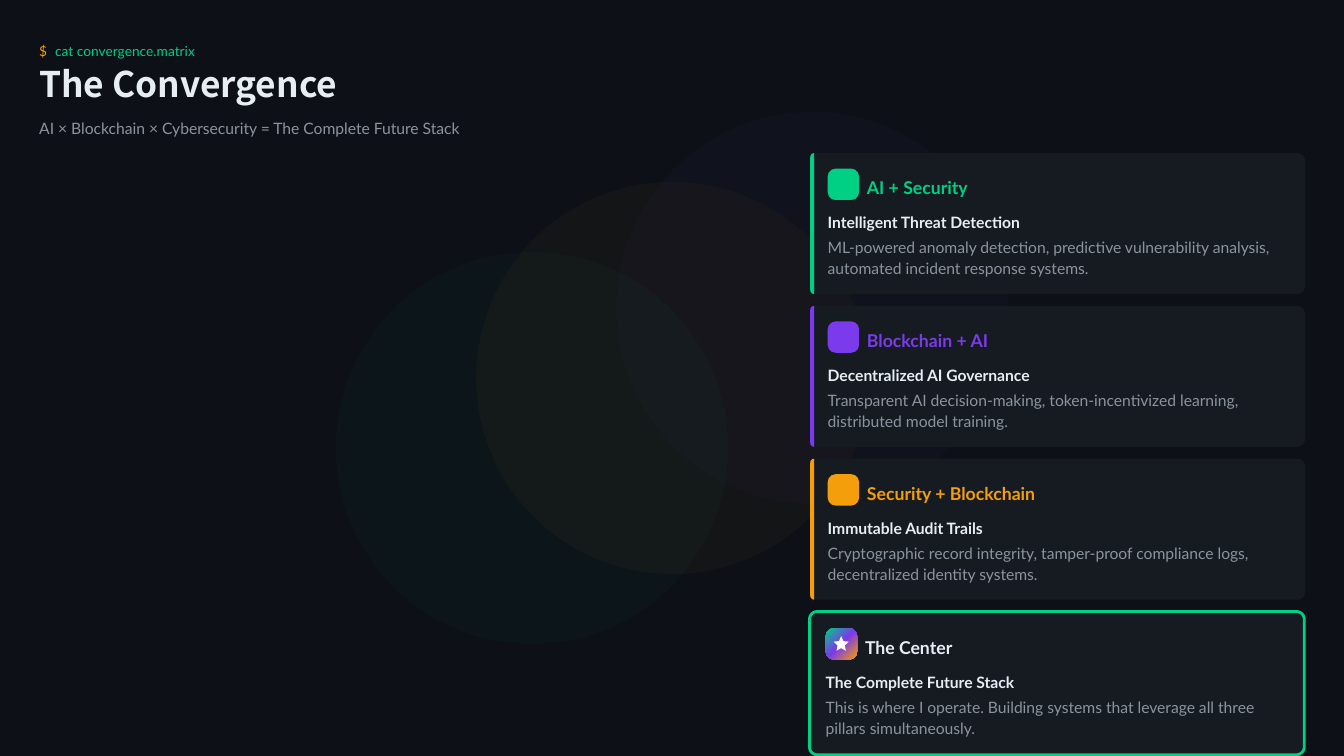
import copy
import dataclasses
import math

import lxml.etree
import pptx
import pptx.dml.color
import pptx.enum.shapes
import pptx.enum.text
import pptx.oxml.ns
import pptx.util

Cm = pptx.util.Cm
Pt = pptx.util.Pt
SHAPE = pptx.enum.shapes.MSO_SHAPE


@dataclasses.dataclass(frozen=True)
class Theme:
    """Colours, fonts and type sizes of the deck."""
    back: str = "0D1117"
    panel: str = "161B22"
    green: str = "00D084"
    purple: str = "7C3AED"
    amber: str = "F59E0B"
    light: str = "E6EDF3"
    muted: str = "8B949E"
    white: str = "FFFFFF"
    body_font: str = "Lato"
    title_font: str = "Noto Sans CJK SC"
    prompt: float = 9.8
    title: float = 25.2
    label: float = 12.6
    text: float = 11.2


THEME = Theme()

CARDS = [
    ("AI + Security", 2.95, THEME.green, "Intelligent Threat Detection",
     "ML-powered anomaly detection, predictive vulnerability analysis, "
     "automated incident response systems."),
    ("Blockchain + AI", 3.56, THEME.purple, "Decentralized AI Governance",
     "Transparent AI decision-making, token-incentivized learning, "
     "distributed model training."),
    ("Security + Blockchain", 4.85, THEME.amber, "Immutable Audit Trails",
     "Cryptographic record integrity, tamper-proof compliance logs, "
     "decentralized identity systems."),
]
CENTER = ("The Center", 2.54, THEME.light, "The Complete Future Stack",
          "This is where I operate. Building systems that leverage all three "
          "pillars simultaneously.")


def rgb(value):
    """Return a colour from its hex value."""
    return pptx.dml.color.RGBColor.from_string(value)


def apply(obj, values):
    """Set each attribute named in the dict."""
    for name, value in values.items():
        setattr(obj, name, value)


def paint(sp, color):
    """Give a shape a plain fill without line or shadow."""
    sp.shadow.inherit = False
    sp.fill.solid()
    sp.fill.fore_color.rgb = rgb(color)
    sp.line.fill.background()
    return sp


def add_preset(s, kind, x, y, w, h, color):
    """Add a plainly filled preset shape."""
    return paint(s.shapes.add_shape(kind, Cm(x), Cm(y), Cm(w), Cm(h)), color)


def add_panel(s, x, y, w, h, left, right, color):
    """Add a panel whose left and right corners have their own radii."""
    corners = [(x + left, y + left, left, 180), (x + w - right, y + right, right, 270),
               (x + w - right, y + h - right, right, 0), (x + left, y + h - left, left, 90)]
    points = []
    for cx, cy, radius, start in corners:
        for step in range(9 if radius else 1):
            angle = math.radians(start + step * 11.25)
            points.append((Cm(cx + radius * math.cos(angle)),
                           Cm(cy + radius * math.sin(angle))))
    builder = s.shapes.build_freeform(*points[0])
    builder.add_line_segments(points[1:], close=True)
    return paint(builder.convert_to_shape(), color)


def write(sp, box, text, size, color, spacing, bold=False, font=THEME.body_font, wrap=True):
    """Place a text shape in its box and fill it with one paragraph."""
    apply(sp, dict(zip(("left", "top", "width", "height"), map(Cm, box))))
    tf = sp.text_frame
    apply(tf, {"margin_left": 0, "margin_top": 0, "margin_right": 0, "margin_bottom": 0,
               "word_wrap": wrap, "auto_size": pptx.enum.text.MSO_AUTO_SIZE.NONE,
               "vertical_anchor": pptx.enum.text.MSO_ANCHOR.MIDDLE})
    p = tf.paragraphs[0]
    apply(p, {"line_spacing": spacing, "alignment": pptx.enum.text.PP_ALIGN.LEFT})
    r = p.add_run()
    r.text = text
    apply(r.font, {"name": font, "size": Pt(size), "bold": bold})
    r.font.color.rgb = rgb(color)


def add_text(s, box, *args, **kwargs):
    """Add a text box."""
    write(s.shapes.add_textbox(0, 0, 0, 0), box, *args, **kwargs)


def add_circles(s, x, y):
    """Draw the three overlapping translucent circles from the lower left corner circle."""
    for step, color in ((0, THEME.green), (2, THEME.purple), (1, THEME.amber)):
        sp = add_preset(s, SHAPE.OVAL, x + 3.53 * step, y - 1.765 * step, 9.88, 9.88, color)
        clr = sp.fill._xPr.find(".//" + pptx.oxml.ns.qn("a:srgbClr"))
        lxml.etree.SubElement(clr, pptx.oxml.ns.qn("a:alpha"), val="3000")


def add_header(s, x, y):
    """Write the prompt, title and subtitle."""
    add_text(s, (x, y, 0.38, 0.48), "$", THEME.prompt, THEME.amber, 1.2, wrap=False)
    add_text(s, (x + 0.4, y, 4.75, 0.48), "cat convergence.matrix",
             THEME.prompt, THEME.green, 1.2, wrap=False)
    write(s.shapes.title, (x, y + 0.68, 32.33, 1), "The Convergence", THEME.title,
          THEME.light, 0.9, bold=True, font=THEME.title_font)
    add_text(s, (x, y + 1.87, 32.08, 0.58),
             "AI × Blockchain × Cybersecurity = The Complete Future Stack",
             THEME.text, THEME.muted, 1.3)


def add_content(s, x, y, card):
    """Place the icon tile and three texts of a card and return the tile."""
    label, width, color, heading, body = card
    tile = add_preset(s, SHAPE.ROUNDED_RECTANGLE, x, y, 0.79, 0.79, color)
    tile.adjustments[0] = 0.25
    add_text(s, (x + 0.99, y + 0.05, width, 0.69), label, THEME.label, color, 1.3,
             bold=True, wrap=False)
    add_text(s, (x, y + 0.99, 11.84, 0.58), heading, THEME.text, THEME.light, 1.3, bold=True)
    add_text(s, (x, y + 1.68, 11.84, 1.09), body, THEME.text, THEME.muted, 1.1)
    return tile


def add_card(s, x, y, w, h, card):
    """Draw a card with an accent edge."""
    add_panel(s, x, y, w, h, 0.1, 0.2, THEME.panel)
    add_panel(s, x, y, 0.1, h, 0.1, 0, card[2])
    add_content(s, x + 0.44, y + 0.39, card)


def add_center(s, x, y, w, h, card):
    """Draw the outlined card with a gradient tile and a star."""
    panel = add_panel(s, x, y, w, h, 0.2, 0.2, THEME.panel)
    panel.line.color.rgb = rgb(THEME.green)
    panel.line.width = Pt(2)
    tile = add_content(s, x + 0.41, y + 0.42, card)
    tile.fill.gradient()
    tile.fill.gradient_angle = 315
    first = tile.fill._xPr.find(".//" + pptx.oxml.ns.qn("a:gs"))
    first.addnext(copy.deepcopy(first))
    colors = (THEME.green, THEME.purple, THEME.amber)
    for i, (stop, color) in enumerate(zip(tile.fill.gradient_stops, colors)):
        stop.color.rgb = rgb(color)
        stop.position = i / 2
    star = add_preset(s, SHAPE.STAR_5_POINT, x + 0.61, y + 0.62, 0.38, 0.37, THEME.white)
    star.adjustments[0] = 0.24


def build_slide(prs):
    """Compose the convergence slide."""
    s = prs.slides.add_slide(prs.slide_layouts[5])
    s.background.fill.solid()
    s.background.fill.fore_color.rgb = rgb(THEME.back)
    add_circles(s, 8.47, 6.35)
    add_header(s, 0.99, 1)
    left, top, width, pitch = 20.42, 3.86, 12.47, 3.85
    for i, card in enumerate(CARDS):
        add_card(s, left, top + i * pitch, width, 3.55, card)
    add_center(s, left - 0.02, top + len(CARDS) * pitch, width, 3.61, CENTER)


def main():
    """Build and save the deck."""
    prs = pptx.Presentation()
    apply(prs, {"slide_width": Cm(33.87), "slide_height": Cm(19.05)})
    build_slide(prs)
    prs.save("out.pptx")


if __name__ == "__main__":
    main()
